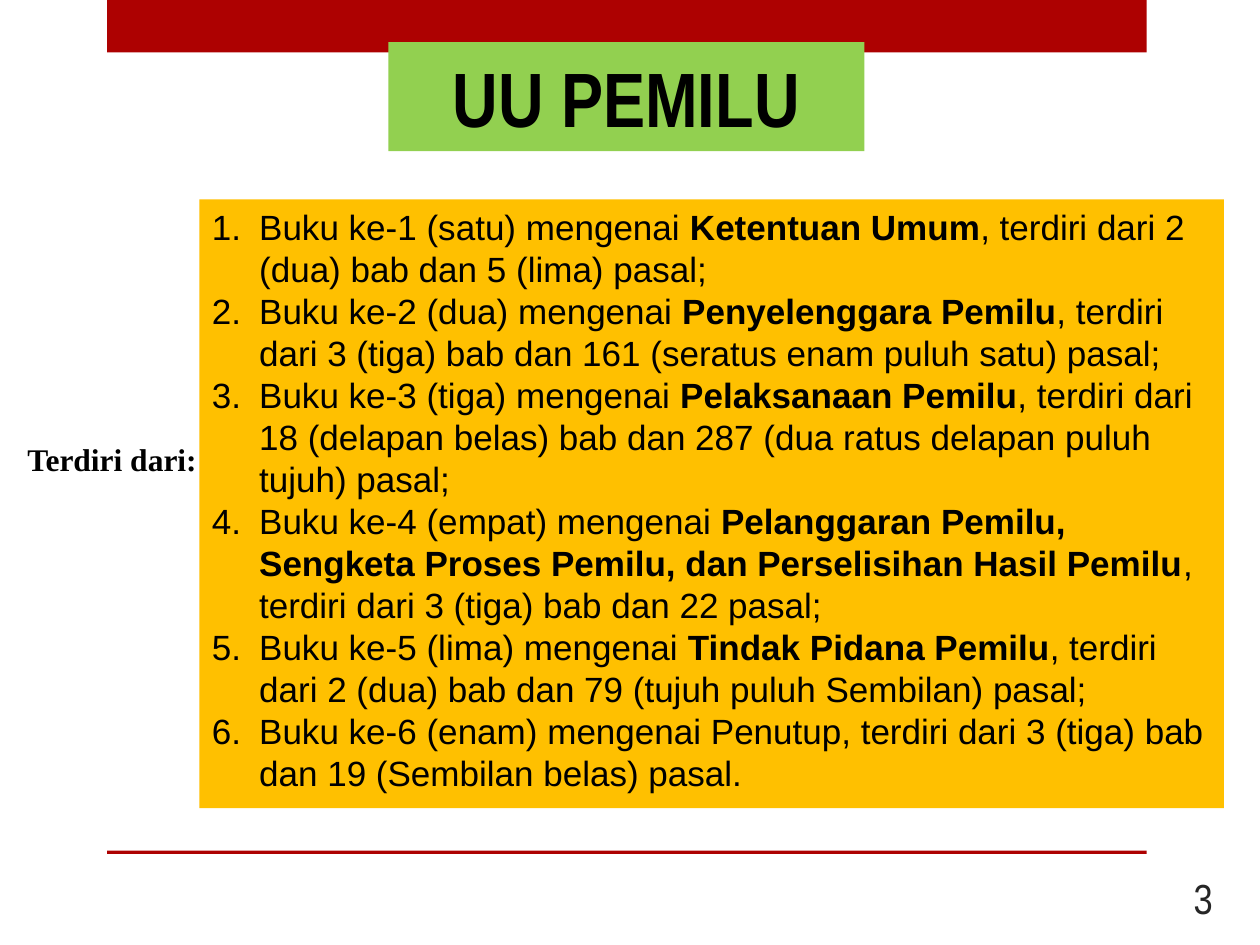
from lxml import etree
from pptx import Presentation
from pptx.dml.color import RGBColor
from pptx.enum import shapes, text
from pptx.oxml import ns
from pptx.util import Pt

COLORS = {"red": "AD0101", "green": "92D050", "amber": "FFC000",
          "black": "000000", "grey": "262626"}

BOOKS = [
    ("Buku ke-1 (satu) mengenai ", "Ketentuan Umum",
     ", terdiri dari 2 (dua) bab dan 5 (lima) pasal;"),
    ("Buku ke-2 (dua) mengenai ", "Penyelenggara Pemilu",
     ", terdiri dari 3 (tiga) bab dan 161 (seratus enam puluh satu) pasal;"),
    ("Buku ke-3 (tiga) mengenai ", "Pelaksanaan Pemilu",
     ", terdiri dari 18 (delapan belas) bab dan 287 (dua ratus delapan puluh tujuh) pasal;"),
    ("Buku ke-4 (empat) mengenai ",
     "Pelanggaran Pemilu, Sengketa Proses Pemilu, dan Perselisihan Hasil Pemilu",
     ", terdiri dari 3 (tiga) bab dan 22 pasal;"),
    ("Buku ke-5 (lima) mengenai ", "Tindak Pidana Pemilu",
     ", terdiri dari 2 (dua) bab dan 79 (tujuh puluh Sembilan) pasal;"),
    ("Buku ke-6 (enam) mengenai Penutup, terdiri dari 3 (tiga) bab "
     "dan 19 (Sembilan belas) pasal.",),
]


def style_span(span, font, size, color="black", bold=False):
    """Set the font, size, colour and weight of a run."""
    span.font.name = font
    span.font.size = Pt(size)
    span.font.bold = bold
    span.font.color.rgb = RGBColor.from_string(COLORS[color])


def add_panel(page, box, color):
    """Add a plain filled rectangle without outline."""
    panel = page.shapes.add_shape(shapes.MSO_SHAPE.RECTANGLE, *map(Pt, box))
    panel.shadow.inherit = False
    panel.fill.solid()
    panel.fill.fore_color.rgb = RGBColor.from_string(COLORS[color])
    panel.line.fill.background()
    return panel


def write_line(shape, words, align, anchor, **style):
    """Write one styled line of text into a shape."""
    frame = shape.text_frame
    frame.word_wrap = True
    frame.vertical_anchor = anchor
    frame.text = words
    para = frame.paragraphs[0]
    para.alignment = align
    style_span(para.runs[0], **style)


def add_frame_bars(page, box):
    """Add the red bars at the top and bottom of the box."""
    left, top, width, height = box
    add_panel(page, (left, top, width, 30), "red")
    add_panel(page, (left, top + height - 2, width, 2), "red")


def add_title(page, box):
    """Add the green title panel."""
    write_line(add_panel(page, box, "green"), "UU PEMILU",
               text.PP_ALIGN.CENTER, text.MSO_ANCHOR.MIDDLE,
               font="Arial Narrow", size=44, bold=True)


def number_paragraph(para, indent):
    """Give a paragraph automatic numbering with a hanging indent."""
    props = para._p.get_or_add_pPr()
    props.set("marL", str(Pt(indent)))
    props.set("indent", str(-Pt(indent)))
    etree.SubElement(props, ns.qn("a:buFont"), typeface="+mj-lt")
    etree.SubElement(props, ns.qn("a:buAutoNum"), type="arabicPeriod")


def add_book_list(page, box):
    """Add the amber panel with the numbered list of books."""
    frame = add_panel(page, box, "amber").text_frame
    frame.word_wrap = True
    frame.vertical_anchor = text.MSO_ANCHOR.TOP
    for index, parts in enumerate(BOOKS):
        para = frame.add_paragraph() if index else frame.paragraphs[0]
        para.alignment = text.PP_ALIGN.LEFT
        para.line_spacing = Pt(24)
        number_paragraph(para, 27)
        for position, words in enumerate(parts):
            span = para.add_run()
            span.text = words
            style_span(span, "Arial", 20, bold=position == 1)


def add_label(page, box):
    """Add the label to the left of the list."""
    write_line(page.shapes.add_textbox(*map(Pt, box)), "Terdiri dari:",
               text.PP_ALIGN.LEFT, text.MSO_ANCHOR.TOP,
               font="Times New Roman", size=18, bold=True)


def add_page_number(page, box):
    """Add the page number."""
    write_line(page.shapes.add_textbox(*map(Pt, box)), "3",
               text.PP_ALIGN.RIGHT, text.MSO_ANCHOR.MIDDLE,
               font="Arial Narrow", size=24, color="grey")


def main():
    """Build the slide and save the deck."""
    deck = Presentation()
    deck.slide_width, deck.slide_height = Pt(720), Pt(540)
    page = deck.slides.add_slide(deck.slide_layouts[6])
    add_frame_bars(page, (61.2, 0, 594, 488))
    add_title(page, (222, 24, 272, 62.4))
    add_book_list(page, (114, 114, 585.4, 347.8))
    add_label(page, (8.6, 247.7, 118.8, 29))
    add_page_number(page, (640, 498.5, 60, 29))
    deck.save("out.pptx")


if __name__ == "__main__":
    main()
